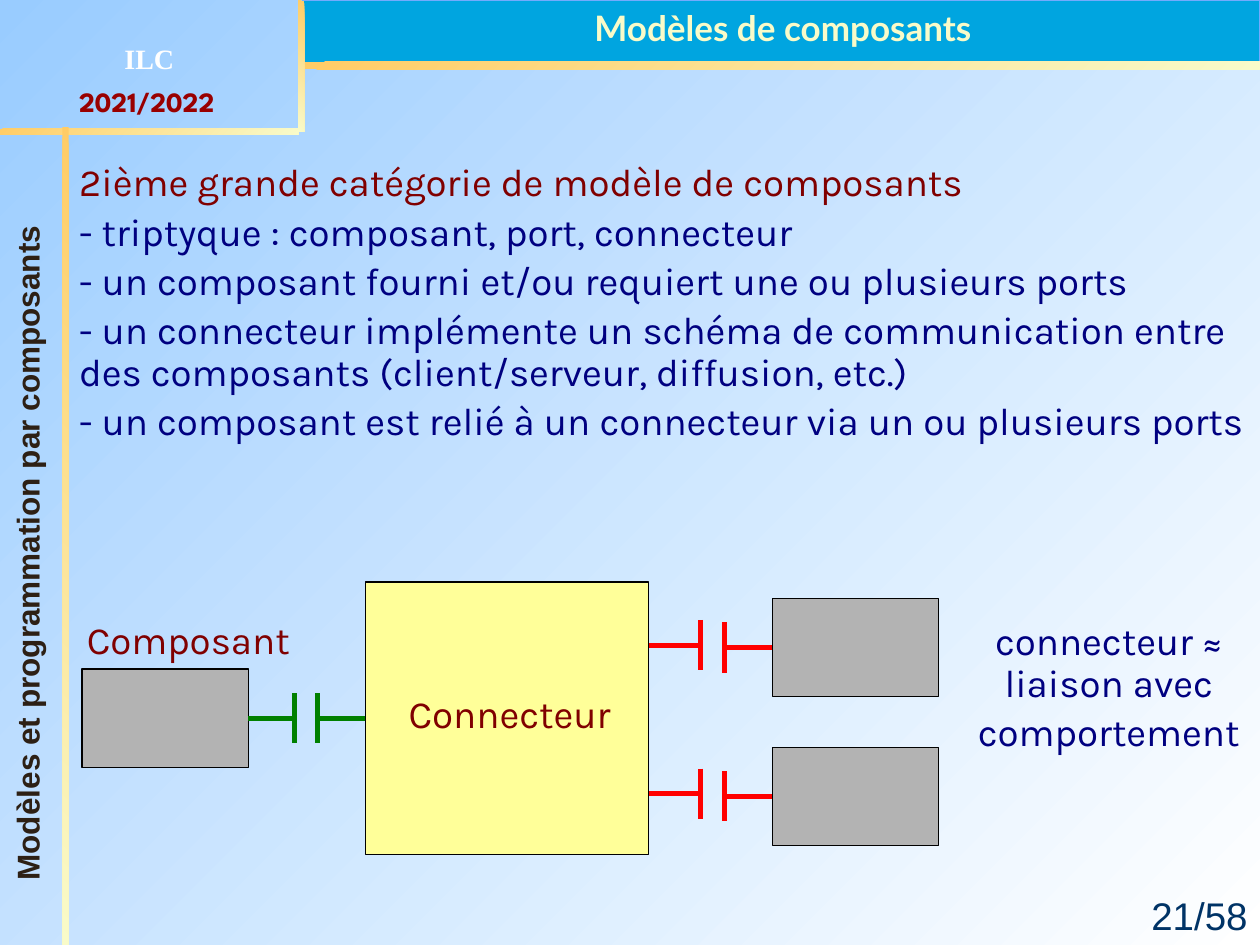
from lxml.etree import SubElement
from pptx import Presentation
from pptx.dml.color import RGBColor
from pptx.enum.shapes import MSO_CONNECTOR, MSO_SHAPE
from pptx.enum.text import MSO_ANCHOR, PP_ALIGN
from pptx.oxml.ns import qn
from pptx.util import Inches, Pt

SKY = RGBColor(0x99, 0xCC, 0xFF)
WHITE = RGBColor(0xFF, 0xFF, 0xFF)
BLACK = RGBColor(0, 0, 0)
BANNER_BLUE = RGBColor(0x00, 0xA5, 0xE0)
BANNER_EDGE = RGBColor(0x74, 0xAB, 0xFC)
GOLD = RGBColor(0xFF, 0xCC, 0x66)
CREAM = RGBColor(0xF9, 0xFB, 0xC9)
RED_BROWN = RGBColor(0x99, 0, 0)
PAGE_BLUE = RGBColor(0x00, 0x33, 0x66)
DARK_BROWN = RGBColor(0x2D, 0x20, 0x15)
MAROON = RGBColor(0x80, 0, 0)
NAVY = RGBColor(0, 0, 0x80)
GREY = RGBColor(0xB3, 0xB3, 0xB3)
YELLOW = RGBColor(0xFF, 0xFF, 0x99)
GREEN = RGBColor(0, 0x80, 0)
RED = RGBColor(0xFF, 0, 0)

LEFT_SIDE, RIGHT_SIDE = 1, 3
BAR_HALF = 0.2


def fill_gradient(fill, start, end):
    """Blend from the top left to the bottom right."""
    fill.gradient()
    fill.gradient_angle = 315
    for stop, color, position in zip(fill.gradient_stops, (start, end), (0, 1)):
        stop.color.rgb = color
        stop.position = position


def add_rectangle(slide, left, top, width, height):
    shape = slide.shapes.add_shape(
        MSO_SHAPE.RECTANGLE, Inches(left), Inches(top), Inches(width), Inches(height))
    shape.shadow.inherit = False
    return shape


def add_block(slide, left, top, width, height, color, line_color=BLACK):
    block = add_rectangle(slide, left, top, width, height)
    block.fill.solid()
    block.fill.fore_color.rgb = color
    block.line.color.rgb = line_color
    block.line.width = Pt(0.75)
    return block


def add_gold_bar(slide, left, top, width, height, rotation=0):
    bar = add_rectangle(slide, left, top, width, height)
    fill_gradient(bar.fill, GOLD, CREAM)
    bar.line.fill.background()
    bar.rotation = rotation


def add_text(slide, left, top, width, height, lines, size, font, bold=False,
             align=PP_ALIGN.CENTER, spacing=None, wrap=True):
    """Add a text box; lines holds one (text, color) pair per paragraph."""
    box = slide.shapes.add_textbox(
        Inches(left), Inches(top), Inches(width), Inches(height))
    frame = box.text_frame
    frame.word_wrap = wrap
    for number, (text, color) in enumerate(lines):
        para = frame.add_paragraph() if number else frame.paragraphs[0]
        para.alignment = align
        if spacing:
            para.line_spacing = spacing
        if number:
            para.space_before = Pt(size * 0.2)
        span = para.add_run()
        span.text = text
        span.font.size = Pt(size)
        span.font.name = font
        span.font.bold = bold
        span.font.color.rgb = color
    return box


def add_body_text(slide, left, top, width, height, lines, align=PP_ALIGN.CENTER):
    add_text(slide, left, top, width, height, lines, 22, "Karla",
             align=align, spacing=0.9)


def add_line(slide, start, end, color):
    line = slide.shapes.add_connector(
        MSO_CONNECTOR.STRAIGHT, *(Inches(value) for value in (*start, *end)))
    line.line.color.rgb = color
    line.line.width = Pt(2.83)
    SubElement(line._element.spPr, qn("a:effectLst"))
    return line


def add_port(slide, edge, bar, y, color, owner=None, side=None):
    """Draw a stem from a block's edge to an upright bar."""
    stem = add_line(slide, (edge, y), (bar, y), color)
    if owner is not None:
        stem.begin_connect(owner, side)
    add_line(slide, (bar, y - BAR_HALF), (bar, y + BAR_HALF), color)


def add_frame(slide):
    fill_gradient(slide.background.fill, SKY, WHITE)
    add_block(slide, 2.4, 0, 7.6, 0.5, BANNER_BLUE, BANNER_EDGE)
    add_text(slide, 0.56, 0.28, 1.25, 0.37, [("ILC", WHITE)], 16,
             "Times New Roman", bold=True)
    add_gold_bar(slide, 2.42, 0.49, 7.58, 0.06)
    add_gold_bar(slide, -0.03, 1.02, 2.4, 0.05)
    add_gold_bar(slide, 1.87, 0.5, 1.04, 0.05, rotation=90)
    add_text(slide, 0.49, 0.62, 1.35, 0.37, [("2021/2022", RED_BROWN)], 16,
             "League Spartan", bold=True)
    add_text(slide, 8.5, 7.03, 1.5, 0.47, [("21/58", PAGE_BLUE)], 22, "Arial",
             align=PP_ALIGN.RIGHT)
    course = add_text(slide, -2.53, 4.19, 5.49, 0.4,
                      [("Modèles et programmation par composants", DARK_BROWN)],
                      18, "Arial", bold=True, wrap=False)
    course.rotation = 270
    add_gold_bar(slide, -2.73, 4.23, 6.5, 0.05, rotation=90)
    title = add_text(slide, 2.43, 0, 7.57, 0.44, [("Modèles de composants", CREAM)],
                     20, "Lato", bold=True)
    title.text_frame.vertical_anchor = MSO_ANCHOR.MIDDLE


def add_diagram(slide):
    client = add_block(slide, 0.65, 5.31, 1.32, 0.78, GREY)
    connector = add_block(slide, 2.9, 4.62, 2.25, 2.16, YELLOW)
    add_port(slide, 1.97, 2.34, 5.7, GREEN, client, RIGHT_SIDE)
    add_port(slide, 2.9, 2.52, 5.7, GREEN, connector, LEFT_SIDE)
    for top in (4.75, 5.93):
        server = add_block(slide, 6.13, top, 1.32, 0.78, GREY)
        add_port(slide, 6.13, 5.75, top + 0.39, RED, server, LEFT_SIDE)
        add_port(slide, 5.15, 5.56, top + 0.37, RED)
    add_body_text(slide, 0.46, 4.88, 2.07, 0.43, [("Composant", MAROON)])
    add_body_text(slide, 3.01, 5.47, 2.07, 0.43, [("Connecteur", MAROON)])
    add_body_text(slide, 7.6, 4.89, 2.4, 1.61, [
        ("connecteur ≈ liaison avec", NAVY), ("comportement", NAVY)])


def main():
    deck = Presentation()
    deck.slide_width, deck.slide_height = Inches(10), Inches(7.5)
    slide = deck.slides.add_slide(deck.slide_layouts[6])
    add_frame(slide)
    add_body_text(slide, 0.53, 1.25, 9.47, 3.12, [
        ("2ième grande catégorie de modèle de composants", MAROON),
        ("- triptyque : composant, port, connecteur", NAVY),
        ("- un composant fourni et/ou requiert une ou plusieurs ports", NAVY),
        ("- un connecteur implémente un schéma de communication entre "
         "des composants (client/serveur, diffusion, etc.)", NAVY),
        ("- un composant est relié à un connecteur via un ou plusieurs ports", NAVY),
    ], align=PP_ALIGN.LEFT)
    add_diagram(slide)
    deck.save("out.pptx")


if __name__ == "__main__":
    main()
